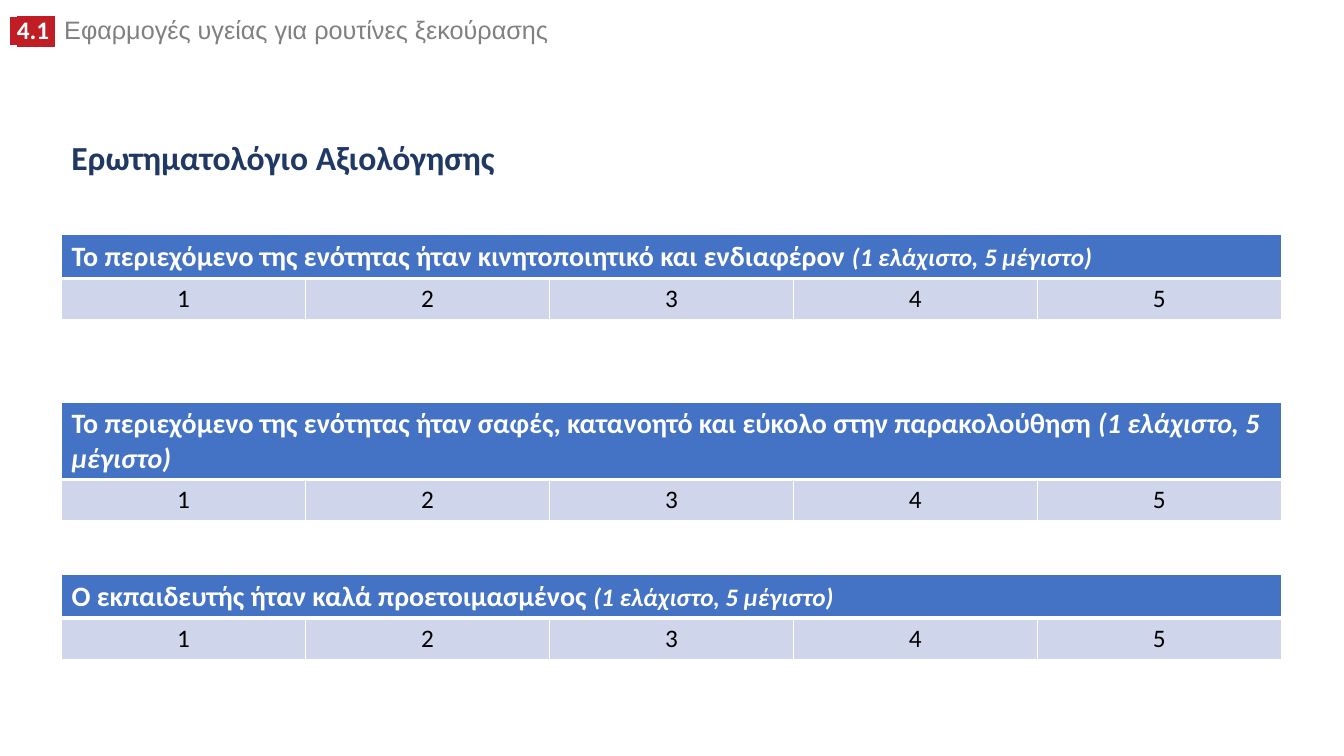
"""Build the evaluation questionnaire slide of unit 4.1."""
from dataclasses import dataclass

from lxml import etree
from pptx import Presentation
from pptx.dml.color import RGBColor
from pptx.enum.text import MSO_ANCHOR, PP_ALIGN
from pptx.oxml.ns import qn
from pptx.util import Inches, Pt

MIDDLE, CENTER = MSO_ANCHOR.MIDDLE, PP_ALIGN.CENTER
WHITE = RGBColor(0xFF, 0xFF, 0xFF)
BLACK = RGBColor(0x00, 0x00, 0x00)
GRAY = RGBColor(0x80, 0x80, 0x80)
RED = RGBColor(0xC0, 0x1E, 0x24)
NAVY = RGBColor(0x20, 0x38, 0x64)
BLUE = RGBColor(0x44, 0x72, 0xC4)
PALE = RGBColor(0xCF, 0xD5, 0xEA)

LEFT, WIDTH, ROW_HEIGHT = 0.61, 12.1, 0.41
SCORES = range(1, 6)
SCALE = "(1 ελάχιστο, 5 μέγιστο)"


@dataclass
class Span:
    text: str
    size: int
    font: str
    color: RGBColor
    bold: bool = False
    italic: bool = False
    highlight: RGBColor | None = None


@dataclass
class Question:
    top: float
    text: str
    scale_size: int = 18


HEADER = [
    Span(" ", 18, "Arial", WHITE, bold=True, highlight=RED),
    Span("4.1 ", 18, "Calibri", WHITE, bold=True, highlight=RED),
    Span(" ", 24, "Arial", BLACK),
    Span("Εφαρμογές υγείας για ρουτίνες ξεκούρασης", 18, "Arial", GRAY),
]
TITLE = [Span("Ερωτηματολόγιο Αξιολόγησης", 24, "Calibri", NAVY, bold=True)]
QUESTIONS = [
    Question(2.33, "Το περιεχόμενο της ενότητας ήταν κινητοποιητικό και ενδιαφέρον "),
    Question(3.99, "Το περιεχόμενο της ενότητας ήταν σαφές, κατανοητό και εύκολο "
                   "στην παρακολούθηση ", 20),
    Question(5.7, "Ο εκπαιδευτής ήταν καλά προετοιμασμένος "),
]


def add_spans(p, spans: list[Span]) -> None:
    for span in spans:
        r = p.add_run()
        r.text = span.text
        r.font.size, r.font.name = Pt(span.size), span.font
        r.font.bold, r.font.italic = span.bold, span.italic
        r.font.color.rgb = span.color
        if span.highlight is not None:
            mark = etree.Element(qn("a:highlight"))
            etree.SubElement(mark, qn("a:srgbClr"), val=str(span.highlight))
            r.font._element.find(qn("a:solidFill")).addnext(mark)


def add_text(s, left: float, top: float, width: float, height: float,
             spans: list[Span], spacing: float):
    tf = s.shapes.add_textbox(Inches(left), Inches(top), Inches(width), Inches(height)).text_frame
    tf.word_wrap = True
    p = tf.paragraphs[0]
    p.line_spacing = spacing
    add_spans(p, spans)
    return tf


def style_cell(cell, fill: RGBColor, top: int, bottom: int) -> None:
    props = cell._tc.get_or_add_tcPr()
    for side, points in (("L", 1), ("R", 1), ("T", top), ("B", bottom)):
        line = etree.SubElement(props, qn(f"a:ln{side}"), w=str(Pt(points)))
        color = etree.SubElement(line, qn("a:solidFill"))
        etree.SubElement(color, qn("a:srgbClr"), val=str(WHITE))
    cell.fill.solid()
    cell.fill.fore_color.rgb = fill


def add_question(s, question: Question) -> None:
    table = s.shapes.add_table(2, len(SCORES), Inches(LEFT), Inches(question.top),
                               Inches(WIDTH), Inches(2 * ROW_HEIGHT)).table
    for col, score in enumerate(SCORES):
        table.columns[col].width = Inches(WIDTH / len(SCORES))
        style_cell(table.cell(0, col), BLUE, 1, 3)
        cell = table.cell(1, col)
        style_cell(cell, PALE, 3, 1)
        p = cell.text_frame.paragraphs[0]
        p.alignment = CENTER
        add_spans(p, [Span(str(score), 18, "Calibri", BLACK)])
    table.cell(0, 0).merge(table.cell(0, len(SCORES) - 1))
    add_spans(table.cell(0, 0).text_frame.paragraphs[0], [
        Span(question.text, 20, "Calibri", WHITE, bold=True),
        Span(SCALE, question.scale_size, "Calibri", WHITE, bold=True, italic=True),
    ])


def main() -> None:
    prs = Presentation()
    prs.slide_width, prs.slide_height = Inches(13.33), Inches(7.5)
    s = prs.slides.add_slide(prs.slide_layouts[6])
    add_text(s, 0, 0.09, 9.52, 0.43, HEADER, 0.8)
    add_text(s, LEFT, 1.18, WIDTH, 0.8, TITLE, 0.9).vertical_anchor = MIDDLE
    for question in QUESTIONS:
        add_question(s, question)
    prs.save("out.pptx")


if __name__ == "__main__":
    main()
